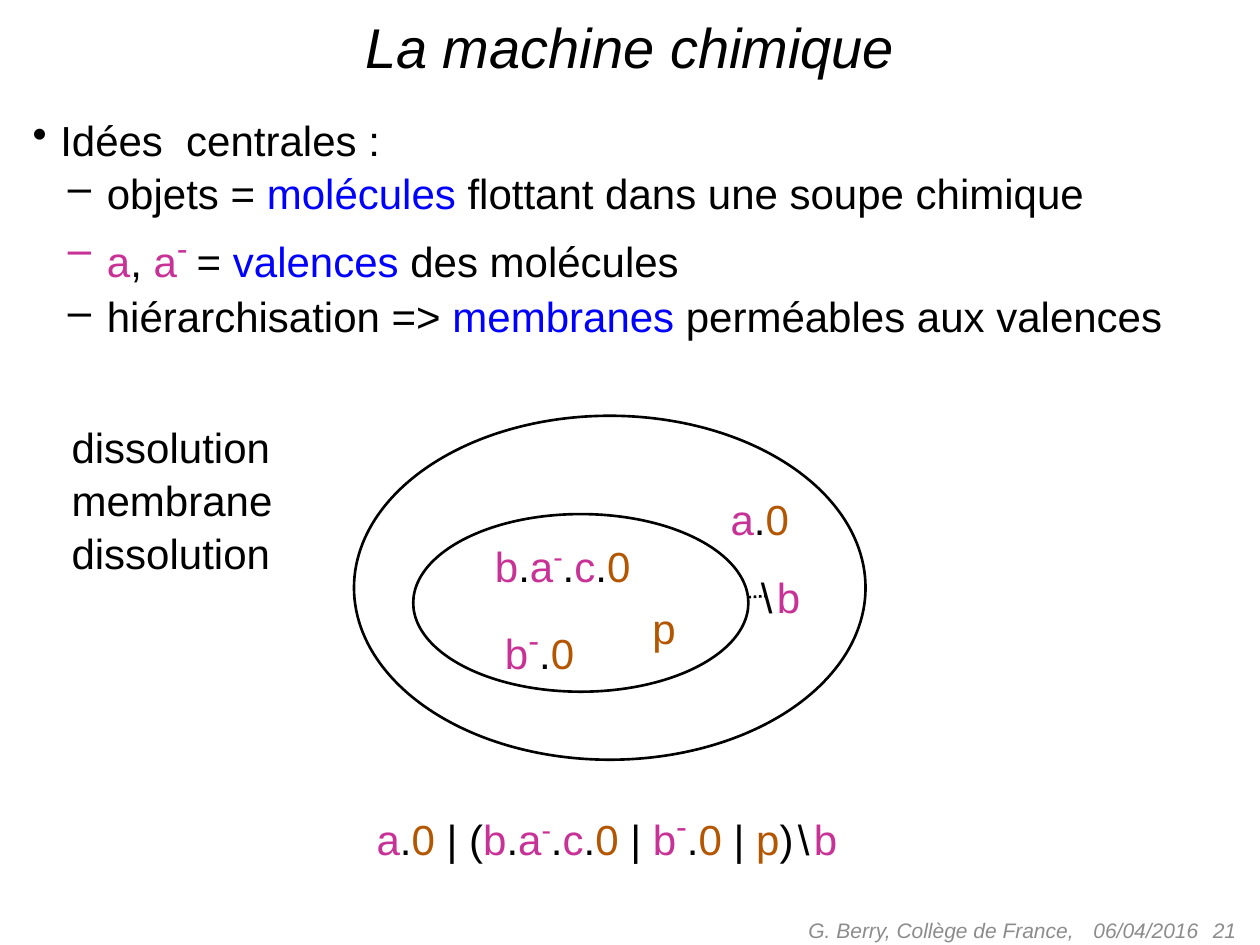
import dataclasses

import lxml.etree
import pptx
import pptx.dml.color
import pptx.enum.dml
import pptx.enum.shapes
import pptx.enum.text
import pptx.oxml.ns
import pptx.util

Inches = pptx.util.Inches
Pt = pptx.util.Pt
Align = pptx.enum.text.PP_ALIGN
Anchor = pptx.enum.text.MSO_ANCHOR
AutoSize = pptx.enum.text.MSO_AUTO_SIZE


@dataclasses.dataclass(frozen=True)
class Theme:
    font: str = "Arial"
    ink: str = "000000"
    valence: str = "C83296"
    process: str = "B45600"
    keyword: str = "0000FF"
    muted: str = "8C8C8C"
    title_size: int = 32
    body_size: int = 24
    footer_size: int = 12
    small_bar: int = 28
    large_bar: int = 32
    thin_space: int = 9
    outline: float = 1.5
    line_spacing: float = 1.05
    space_before: int = 6
    hanging: float = 0.22


@dataclasses.dataclass(frozen=True)
class Span:
    text: str
    color: str
    size: int
    raised: bool = False
    italic: bool = False


class SlideBuilder:
    def __init__(self, page, theme):
        self.page = page
        self.theme = theme

    def box(self, left, top, width, height, wrap=True, grow=True):
        frame = self.page.shapes.add_textbox(
            Inches(left), Inches(top), Inches(width), Inches(height)
        ).text_frame
        frame.word_wrap = wrap
        frame.auto_size = AutoSize.SHAPE_TO_FIT_TEXT if grow else AutoSize.NONE
        return frame

    def add_spans(self, para, spans):
        for span in spans:
            run = para.add_run()
            run.text = span.text
            run.font.name = self.theme.font
            run.font.size = Pt(span.size)
            run.font.italic = span.italic
            run.font.color.rgb = pptx.dml.color.RGBColor.from_string(span.color)
            if span.raised:
                run.font._element.set("baseline", "30000")

    def heading(self, text, left, top, width, height):
        para = self.box(left, top, width, height).paragraphs[0]
        para.alignment = Align.CENTER
        self.add_spans(para, [Span(text, self.theme.ink, self.theme.title_size, italic=True)])

    def footer(self, text, left, width, alignment):
        frame = self.box(left, 7.18, width, 0.4, grow=False)
        frame.vertical_anchor = Anchor.MIDDLE
        para = frame.paragraphs[0]
        para.alignment = alignment
        self.add_spans(para, [Span(text, self.theme.muted, self.theme.footer_size, italic=True)])

    def lines(self, rows, left, top, width, height, wrap=False, bullets=()):
        frame = self.box(left, top, width, height, wrap)
        hanging = self.theme.hanging
        for index, spans in enumerate(rows):
            para = frame.paragraphs[0] if index == 0 else frame.add_paragraph()
            para.line_spacing = self.theme.line_spacing
            para.space_before = Pt(0 if index else self.theme.space_before)
            margin, indent = hanging, hanging
            if bullets and index:
                para.level = 1
                margin, indent = 0.59, 0.31
            properties = para._p.get_or_add_pPr()
            properties.set("marL", str(Inches(margin)))
            properties.set("indent", str(-Inches(indent)))
            if bullets:
                bullet = lxml.etree.SubElement(properties, pptx.oxml.ns.qn("a:buChar"))
                bullet.set("char", bullets[min(index, 1)])
            self.add_spans(para, spans)

    def stroke(self, line):
        line.color.rgb = pptx.dml.color.RGBColor.from_string(self.theme.ink)
        line.width = Pt(self.theme.outline)

    def membrane(self, left, top, width, height):
        oval = self.page.shapes.add_shape(
            pptx.enum.shapes.MSO_SHAPE.OVAL,
            Inches(left), Inches(top), Inches(width), Inches(height),
        )
        oval.shadow.inherit = False
        oval.fill.background()
        self.stroke(oval.line)

    def dotted_link(self, start, end):
        link = self.page.shapes.add_connector(
            pptx.enum.shapes.MSO_CONNECTOR.STRAIGHT, *map(Inches, start + end)
        )
        self.stroke(link.line)
        link.line.dash_style = pptx.enum.dml.MSO_LINE.ROUND_DOT
        lxml.etree.SubElement(link._element.spPr, pptx.oxml.ns.qn("a:effectLst"))


def main():
    theme = Theme()
    deck = pptx.Presentation()
    deck.slide_width, deck.slide_height = Inches(10), Inches(7.5)
    builder = SlideBuilder(deck.slides.add_slide(deck.slide_layouts[6]), theme)

    def ink(text):
        return Span(text, theme.ink, theme.body_size)

    def valence(text):
        return Span(text, theme.valence, theme.body_size)

    def process(text):
        return Span(text, theme.process, theme.body_size)

    def keyword(text):
        return Span(text, theme.keyword, theme.body_size)

    def bar(size, text="-"):
        return Span(text, theme.valence, size, raised=True)

    dot, zero = ink("."), process("0")
    a, b, c = valence("a"), valence("b"), valence("c")
    emitter = [a, dot, zero]
    chain = [b, dot, a, bar(theme.small_bar), dot, c, dot, zero]
    receiver = [b, bar(theme.large_bar), dot, zero]
    free = [process("p")]
    thin = Span(" ", theme.ink, theme.thin_space)
    restriction = [ink("\\"), thin, b]
    parallel = ink(" | ")
    formula = [
        *emitter, ink(" | ("), *chain, parallel, *receiver, parallel,
        *free, ink(")"), thin, *restriction,
    ]

    builder.footer("06/04/2016", 8.58, 2.33, Align.LEFT)
    builder.footer("21", 7.58, 2.33, Align.RIGHT)
    builder.footer("G. Berry, Collège de France, ", 5.5, 3.17, Align.RIGHT)
    builder.heading("La machine chimique", 0.25, 0.05, 9.5, 0.64)

    ideas = [
        [ink("Idées  centrales :")],
        [ink("objets = "), keyword("molécules"),
         ink(" flottant dans une soupe chimique")],
        [a, ink(", "), a, bar(theme.large_bar, "- "), ink("= "),
         keyword("valences"), ink(" des molécules")],
        [ink("hiérarchisation => "), keyword("membranes "),
         ink("perméables aux valences")],
    ]
    builder.lines(ideas, 0.16, 0.84, 9.69, 1.79, wrap=True, bullets="•–")

    steps = [[ink(word)] for word in ("dissolution", "membrane", "dissolution")]
    builder.lines(steps, 0.47, 3.28, 1.8, 1.37)

    builder.membrane(2.81, 3.3, 4.06, 2.73)
    builder.membrane(3.28, 4.08, 2.66, 1.41)
    builder.dotted_link((5.94, 4.74), (6.08, 4.73))

    for spans, left, top, width, height in (
        (emitter, 5.7, 3.85, 0.67, 0.53),
        (chain, 3.83, 4.16, 1.3, 0.53),
        (receiver, 3.91, 4.79, 0.77, 0.53),
        (free, 5.08, 4.71, 0.39, 0.5),
        (restriction, 5.94, 4.47, 0.61, 0.53),
        (formula, 2.89, 6.27, 4.01, 0.53),
    ):
        builder.lines([spans], left, top, width, height)

    deck.save("out.pptx")


if __name__ == "__main__":
    main()
